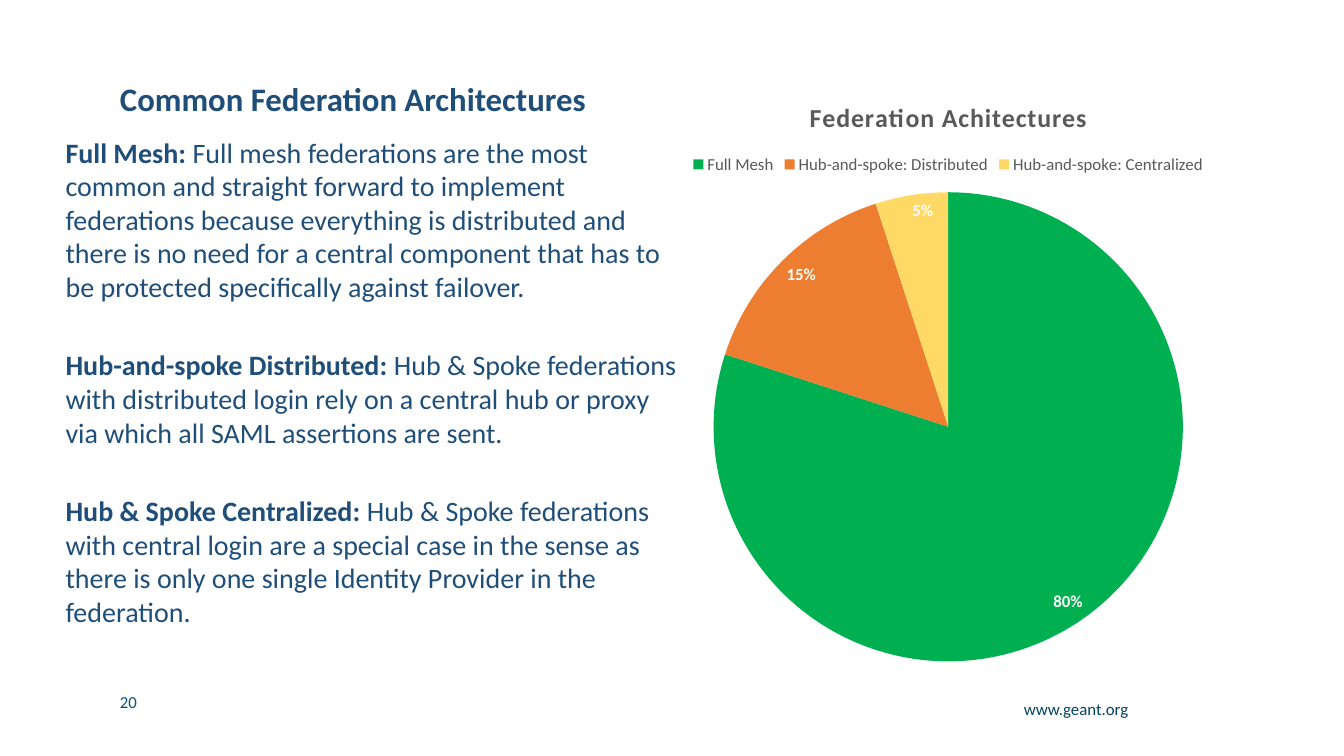
"""Build the slide on common federation architectures with its pie chart."""
import pptx
import pptx.chart.data
import pptx.dml.color
import pptx.enum.chart
import pptx.enum.text
import pptx.oxml
import pptx.oxml.ns
import pptx.util

Inches = pptx.util.Inches
Pt = pptx.util.Pt
ALIGN = pptx.enum.text.PP_ALIGN

COLOURS = {
    "navy": "1F4E79",
    "page": "065081",
    "web": "03435F",
    "grey": "595959",
    "white": "FFFFFF",
}
ARCHITECTURES = [
    ("Full Mesh", 80, "00B050"),
    ("Hub-and-spoke: Distributed", 15, "ED7D31"),
    ("Hub-and-spoke: Centralized", 5, "FFD966"),
]
DESCRIPTIONS = [
    ("Full Mesh: ",
     "Full mesh federations are the most common and straight forward to implement "
     "federations because everything is distributed and there is no need for a central "
     "component that has to be protected specifically against failover."),
    ("Hub-and-spoke Distributed: ",
     "Hub & Spoke federations with distributed login rely on a central hub or proxy "
     "via which all SAML assertions are sent."),
    ("Hub & Spoke Centralized: ",
     "Hub & Spoke federations with central login are a special case in the sense as "
     "there is only one single Identity Provider in the federation."),
]


def apply(target, values):
    """Set each named attribute on the target."""
    for name, value in values.items():
        setattr(target, name, value)


def style(font, size, colour, bold=False):
    """Give a font its face, size, weight and colour."""
    apply(font, {"name": "Calibri", "size": Pt(size), "bold": bold})
    font.color.rgb = pptx.dml.color.RGBColor.from_string(COLOURS[colour])


deck = pptx.Presentation()
apply(deck, {"slide_width": Inches(13.33), "slide_height": Inches(7.5)})
slide = deck.slides.add_slide(deck.slide_layouts[1])

heading = slide.shapes.title
apply(heading, {"left": Inches(1.09), "top": Inches(0.77),
                "width": Inches(10.82), "height": Inches(0.47)})
apply(heading.text_frame, {
    "text": "Common Federation Architectures",
    "word_wrap": True,
    "auto_size": pptx.enum.text.MSO_AUTO_SIZE.NONE,
    "vertical_anchor": pptx.enum.text.MSO_ANCHOR.MIDDLE,
})
apply(heading.text_frame.paragraphs[0], {"alignment": ALIGN.LEFT, "line_spacing": 0.9})
style(heading.text_frame.paragraphs[0].runs[0].font, 23.4, "navy", True)

descriptions = slide.placeholders[1]
apply(descriptions, {"left": Inches(0.52), "top": Inches(1.21),
                     "width": Inches(6.38), "height": Inches(5.7)})
inset = Inches(0.13)
apply(descriptions.text_frame, {
    "word_wrap": True,
    "auto_size": pptx.enum.text.MSO_AUTO_SIZE.NONE,
    "margin_left": inset, "margin_right": inset,
    "margin_top": inset, "margin_bottom": inset,
})
for index, (term, meaning) in enumerate(DESCRIPTIONS):
    frame = descriptions.text_frame
    paragraph = frame.add_paragraph() if index else frame.paragraphs[0]
    properties = paragraph._p.get_or_add_pPr()
    properties.set("marL", "0")
    properties.set("indent", "0")
    properties.append(pptx.oxml.parse_xml(
        "<a:buNone %s/>" % pptx.oxml.ns.nsdecls("a")))
    apply(paragraph, {"space_before": Pt(16 if index else 0), "space_after": Pt(16)})
    for words, bold in ((term, True), (meaning, False)):
        run = paragraph.add_run()
        run.text = words
        style(run.font, 20, "navy", bold)

for words, box, colour, alignment, spacing in (
    ("20", (1.09, 6.81, 1.45, 0.3), "page", ALIGN.LEFT, 1.0),
    ("www.geant.org", (9.61, 6.91, 1.68, 0.37), "web", ALIGN.RIGHT, 0.9),
):
    footer = slide.shapes.add_textbox(*map(Inches, box)).text_frame
    apply(footer, {"text": words, "word_wrap": True})
    apply(footer.paragraphs[0], {"alignment": alignment, "line_spacing": spacing})
    style(footer.paragraphs[0].runs[0].font, 12, colour)

shares = pptx.chart.data.CategoryChartData()
shares.categories = [name for name, share, fill in ARCHITECTURES]
shares.add_series("Federation Achitectures", [share for name, share, fill in ARCHITECTURES])
pie = slide.shapes.add_chart(
    pptx.enum.chart.XL_CHART_TYPE.PIE,
    Inches(4.96), Inches(0.77), Inches(8.89), Inches(5.93), shares).chart
style(pie.font, 10, "grey")

apply(pie, {"has_title": True, "has_legend": True})
pie.chart_title.include_in_layout = False
pie_title = pie.chart_title.text_frame
pie_title.text = "Federation Achitectures"
title_font = pie_title.paragraphs[0].runs[0].font
style(title_font, 18.5, "grey", True)
title_font._element.set("spc", "50")

apply(pie.legend, {"position": pptx.enum.chart.XL_LEGEND_POSITION.TOP,
                   "include_in_layout": False})
style(pie.legend.font, 12, "grey")

plot = pie.plots[0]
apply(plot, {"vary_by_categories": True, "has_data_labels": True})
apply(plot.data_labels, {
    "show_percentage": True,
    "show_value": False,
    "number_format": "0%",
    "number_format_is_linked": False,
    "position": pptx.enum.chart.XL_LABEL_POSITION.INSIDE_END,
})
style(plot.data_labels.font, 12, "white", True)
for index, (name, share, fill) in enumerate(ARCHITECTURES):
    slice_format = plot.series[0].points[index].format
    slice_format.fill.solid()
    slice_format.fill.fore_color.rgb = pptx.dml.color.RGBColor.from_string(fill)
    slice_format.line.fill.background()

deck.save("out.pptx")
